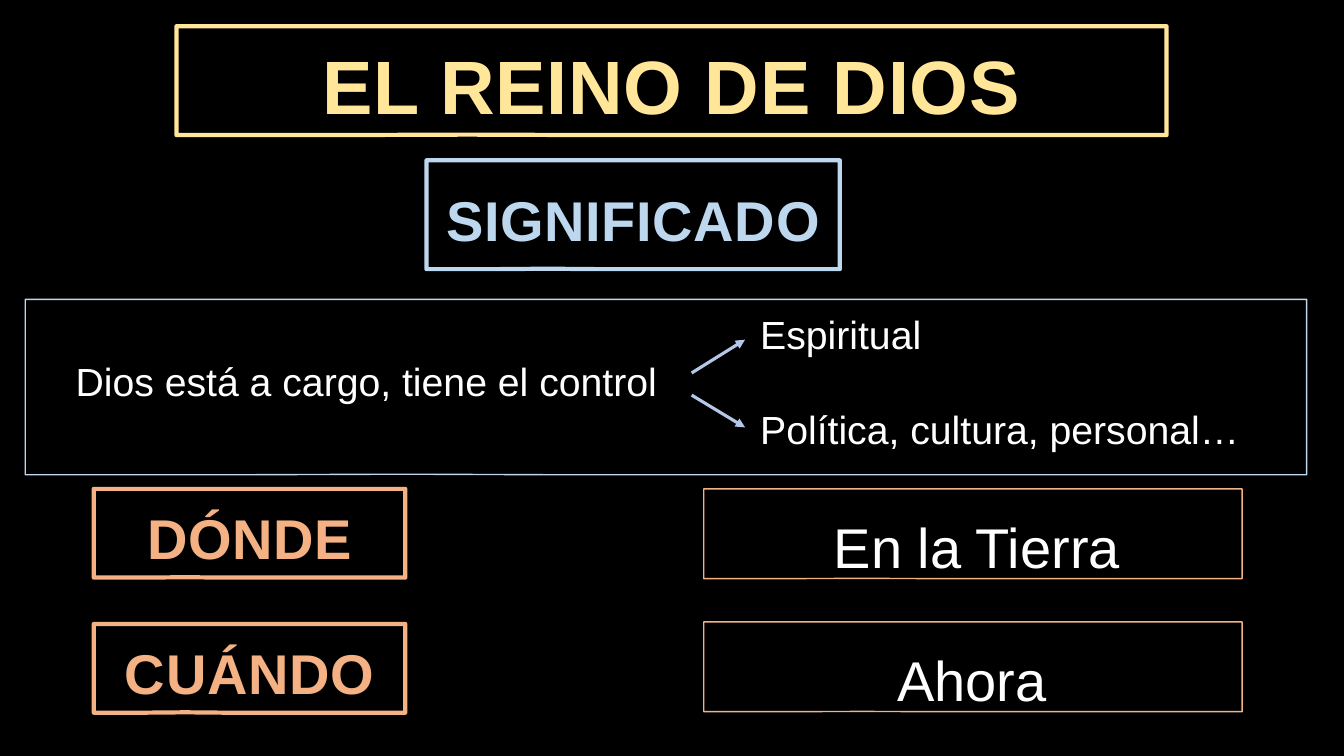
from dataclasses import dataclass

from lxml import etree
from pptx import Presentation
from pptx import util as u
from pptx.dml.color import RGBColor
from pptx.enum import shapes, text
from pptx.oxml import ns

PX = 9144  # EMU in one px, 100 px to the inch
BLACK = RGBColor(0x00, 0x00, 0x00)
WHITE = RGBColor(0xFF, 0xFF, 0xFF)
YELLOW = RGBColor(0xFF, 0xE6, 0x99)
BLUE = RGBColor(0xBD, 0xD7, 0xEE)
ARROW_BLUE = RGBColor(0xB4, 0xC7, 0xE7)
ORANGE = RGBColor(0xF4, 0xB1, 0x83)


@dataclass(frozen=True)
class Heading:
    words: str
    left: int
    top: int
    width: int
    height: int
    color: RGBColor
    size: int = 40


@dataclass(frozen=True)
class Answer:
    words: str
    left: int
    top: int
    width: int
    height: int
    color: RGBColor
    size: int
    indent: int
    pad_top: int = 0
    pad_bottom: int = 0


@dataclass(frozen=True)
class Aspect:
    words: str
    top: int
    arrow_start: int
    arrow_end: int


HEADINGS = (
    Heading("EL REINO DE DIOS", 175, 26, 982, 108, YELLOW, 54),
    Heading("SIGNIFICADO", 423, 159, 410, 108, BLUE),
    Heading("DÓNDE", 93, 485, 309, 88, ORANGE),
    Heading("CUÁNDO", 93, 619, 309, 88, ORANGE),
)
ANSWERS = (
    Answer("Dios está a cargo, tiene el control", 25, 297, 1271, 174, BLUE, 28, 50, pad_bottom=12),
    Answer("En la Tierra", 698, 485, 534, 89, ORANGE, 40, 129, pad_top=24),
    Answer("Ahora", 698, 617, 534, 89, ORANGE, 40, 192, pad_top=24),
)
ASPECTS = (
    Aspect("Espiritual", 309, 370, 337),
    Aspect("Política, cultura, personal…", 403, 392, 424),
)


def px(*lengths: int) -> list[u.Emu]:
    return [u.Emu(length * PX) for length in lengths]


def write(frame, words: str, size: int, color: RGBColor, align, margins, bold: bool = False):
    """Fill a text frame; margins run left, top, right, bottom in px."""
    left, top, right, bottom = px(*margins)
    layout = dict(word_wrap=True, vertical_anchor=text.MSO_ANCHOR.MIDDLE, margin_left=left,
                  margin_top=top, margin_right=right, margin_bottom=bottom)
    for name, value in layout.items():
        setattr(frame, name, value)
    paragraph = frame.paragraphs[0]
    paragraph.alignment = align
    run = paragraph.add_run()
    run.text = words
    for name, value in dict(name="Arial", size=u.Pt(size), bold=bold).items():
        setattr(run.font, name, value)
    run.font.color.rgb = color
    return run


def add_callout(slide, box: Heading | Answer, line_width: int, tip: tuple[float, float]):
    """Add a black callout whose tip lies on its lower edge."""
    callout = slide.shapes.add_shape(shapes.MSO_SHAPE.RECTANGULAR_CALLOUT,
                                     *px(box.left, box.top, box.width, box.height))
    callout.shadow.inherit = False
    callout.adjustments[0], callout.adjustments[1] = tip
    callout.fill.solid()
    callout.fill.fore_color.rgb = BLACK
    callout.line.color.rgb = box.color
    callout.line.width = u.Pt(line_width)
    return callout


def add_heading(slide, heading: Heading) -> None:
    callout = add_callout(slide, heading, 3, (-0.206, 0.496))
    run = write(callout.text_frame, heading.words, heading.size, heading.color,
                text.PP_ALIGN.CENTER, (10, 8, 10, 0), bold=True)
    run.font._element.set("spc", "50")


def add_answer(slide, answer: Answer) -> None:
    callout = add_callout(slide, answer, 1, (-0.205, 0.497))
    write(callout.text_frame, answer.words, answer.size, WHITE, text.PP_ALIGN.LEFT,
          (answer.indent, answer.pad_top, 0, answer.pad_bottom))


def add_aspect(slide, aspect: Aspect) -> None:
    label = slide.shapes.add_textbox(*px(754, aspect.top, 520, 44))
    write(label.text_frame, aspect.words, 28, WHITE, text.PP_ALIGN.LEFT, (0, 0, 0, 0))
    arrow = slide.shapes.add_connector(shapes.MSO_CONNECTOR.STRAIGHT,
                                       *px(686, aspect.arrow_start, 739, aspect.arrow_end))
    arrow.line.color.rgb = ARROW_BLUE
    arrow.line.width = u.Pt(2.25)
    etree.SubElement(arrow.line._get_or_add_ln(), ns.qn("a:tailEnd"), type="triangle")
    etree.SubElement(arrow._element.spPr, ns.qn("a:effectLst"))


def main() -> None:
    deck = Presentation()
    deck.slide_width, deck.slide_height = u.Inches(13.33), u.Inches(7.5)
    slide = deck.slides.add_slide(deck.slide_layouts[6])
    slide.background.fill.solid()
    slide.background.fill.fore_color.rgb = BLACK
    for heading in HEADINGS:
        add_heading(slide, heading)
    for answer in ANSWERS:
        add_answer(slide, answer)
    for aspect in ASPECTS:
        add_aspect(slide, aspect)
    deck.save("out.pptx")


if __name__ == "__main__":
    main()
